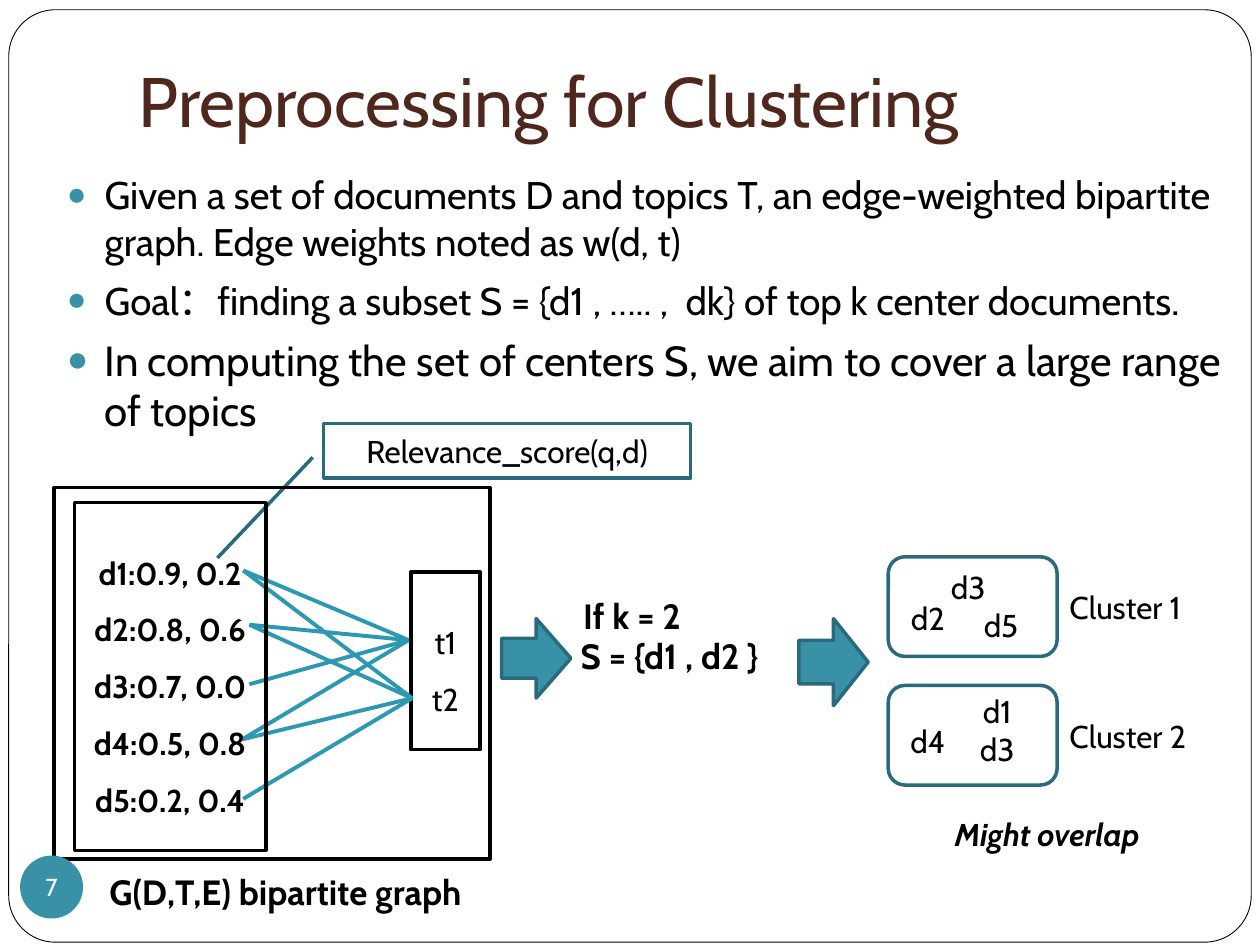
import pptx
import pptx.util
import pptx.dml.color
import pptx.enum.shapes
import pptx.enum.text
import pptx.oxml
import pptx.oxml.ns
from lxml import etree

Pt = pptx.util.Pt
SHAPE = pptx.enum.shapes.MSO_SHAPE
ALIGN = pptx.enum.text.PP_ALIGN
ANCHOR = pptx.enum.text.MSO_ANCHOR

FONT = "Cabin"
COLORS = {
    "ink": "000000",
    "paper": "FFFFFF",
    "title": "4F271C",
    "teal": "3891A7",
    "outline": "296B7C",
    "edge": "2D98B2",
}
BULLETS = [
    [("Given a set of documents D and topics T, an edge-weighted bipartite "
      "graph. Edge weights noted as w(d, t)", 22)],
    [("Goal：finding a subset S = {d1 , ….. ,  dk} of top k center documents", 22),
     (".", 24)],
    [("In computing the set of centers S, we aim to cover a large range of topics", 24)],
]
DOCUMENTS = ["d1:0.9, 0.2", "d2:0.8, 0.6", "d3:0.7, 0.0", "d4:0.5, 0.8", "d5:0.2, 0.4"]
DOCUMENT_PORTS = {"d1": (139, 326), "d2": (142.5, 357), "d3": (142.5, 391),
                  "d4": (138.5, 422.5), "d5": (139, 456.5)}
TOPIC_PORTS = {"t1": (233.5, 365.8), "t2": (235.5, 399)}
EDGES = [("d1", "t1"), ("d3", "t1"), ("d4", "t1"), ("d2", "t2"),
         ("d5", "t2"), ("d1", "t2"), ("d2", "t1"), ("d4", "t2")]
CLUSTERS = [("Cluster 1", 318.2, 332.6), ("Cluster 2", 391.7, 406.1)]
MEMBERS = [("d2", 501.8, 335.5), ("d4", 501.8, 406.1), ("d3", 524.9, 318.2),
           ("d1", 541.4, 388.8), ("d5", 543.6, 339.8), ("d3", 541.4, 410.4)]


def rgb(name):
    return pptx.dml.color.RGBColor.from_string(COLORS[name])


def style_font(font, size, color="ink", bold=False, italic=False):
    font.name = FONT
    font.size = Pt(size)
    font.color.rgb = rgb(color)
    font.bold = bold
    font.italic = italic


def place(part, box):
    part.left, part.top, part.width, part.height = map(Pt, box)


def write_lines(frame, lines, size, color="ink", bold=False, italic=False,
                align=ALIGN.LEFT, spacing=None):
    frame.word_wrap = True
    frame.text = "\n".join(lines)
    for paragraph in frame.paragraphs:
        paragraph.alignment = align
        paragraph.line_spacing = spacing
        style_font(paragraph.font, size, color, bold, italic)


def add_figure(slide, kind, box, fill=None, line=None, width=2, lines=(),
               size=18, color="ink", bold=False, spacing=None):
    figure = slide.shapes.add_shape(kind, *map(Pt, box))
    figure.shadow.inherit = False
    if fill:
        figure.fill.solid()
        figure.fill.fore_color.rgb = rgb(fill)
    else:
        figure.fill.background()
    if line:
        figure.line.color.rgb = rgb(line)
        figure.line.width = Pt(width)
    else:
        figure.line.fill.background()
    if lines:
        figure.text_frame.vertical_anchor = ANCHOR.MIDDLE
        write_lines(figure.text_frame, lines, size, color, bold,
                    align=ALIGN.CENTER, spacing=spacing)
    return figure


def add_label(slide, text, box, size, bold=False, italic=False):
    label = slide.shapes.add_textbox(*map(Pt, box))
    write_lines(label.text_frame, [text], size, bold=bold, italic=italic)


def add_edge(slide, start, end):
    edge = slide.shapes.add_connector(
        pptx.enum.shapes.MSO_CONNECTOR.STRAIGHT, *map(Pt, (*start, *end)))
    edge.line.color.rgb = rgb("edge")
    edge.line.width = Pt(2.25)
    etree.SubElement(edge.element.spPr, pptx.oxml.ns.qn("a:effectLst"))


def set_bullet(paragraph):
    properties = paragraph._p.get_or_add_pPr()
    properties.set("marL", str(Pt(21.6)))
    properties.set("indent", str(-Pt(21.6)))
    namespace = pptx.oxml.ns.nsdecls("a")
    for markup in (
        f'<a:buClr {namespace}><a:srgbClr val="{COLORS["teal"]}"/></a:buClr>',
        f'<a:buSzPct {namespace} val="85000"/>',
        f'<a:buChar {namespace} char="●"/>',
    ):
        properties.append(pptx.oxml.parse_xml(markup))


def fill_title(title):
    place(title, (72, 9.4, 612, 78.5))
    frame = title.text_frame
    frame.auto_size = pptx.enum.text.MSO_AUTO_SIZE.NONE
    frame.vertical_anchor = ANCHOR.BOTTOM
    frame.margin_bottom = Pt(7.2)
    write_lines(frame, ["Preprocessing for Clustering"], 40, "title")


def fill_body(body):
    place(body, (31, 94.3, 674.6, 168.5))
    frame = body.text_frame
    frame.auto_size = pptx.enum.text.MSO_AUTO_SIZE.NONE
    for index, pieces in enumerate(BULLETS):
        paragraph = frame.add_paragraph() if index else frame.paragraphs[0]
        paragraph.space_before = Pt(5.8)
        set_bullet(paragraph)
        for text, size in pieces:
            run = paragraph.add_run()
            run.text = text
            style_font(run.font, size)


def add_page_frame(slide):
    frame = add_figure(slide, SHAPE.ROUNDED_RECTANGLE, (5, 5.6, 710, 532.8),
                       "paper", "ink", 0.5)
    frame.adjustments[0] = 0.05
    slide.shapes.title.element.addprevious(frame.element)


def add_score_callout(slide):
    callout = add_figure(slide, SHAPE.LINE_CALLOUT_1, (185, 241.9, 209.5, 31.4),
                         line="outline", lines=["Relevance_score(q,d)"])
    for index, value in enumerate((0.62, -0.03, 2.45, -0.29)):
        callout.adjustments[index] = value


def add_clusters(slide):
    for name, box_top, label_top in CLUSTERS:
        add_figure(slide, SHAPE.ROUNDED_RECTANGLE, (507.6, box_top, 96.5, 56.9),
                   line="outline")
        add_label(slide, name, (604, label_top, 85, 29), 18)
    for name, left, top in MEMBERS:
        add_figure(slide, SHAPE.OVAL, (left, top, 56.9, 34.6), lines=[name])
    add_label(slide, "Might overlap", (538.6, 462.2, 130.3, 29), 18, True, True)


def add_selection(slide):
    for box in ((286.6, 353.5, 39.6, 45.4), (456.5, 353.5, 39.6, 49.7)):
        add_figure(slide, SHAPE.RIGHT_ARROW, box, "teal", "outline")
    add_label(slide, "If k = 2", (326.2, 336.2, 79.2, 31.5), 20, True)
    add_label(slide, "S = {d1 , d2 }", (324.7, 359.3, 158.4, 31.5), 20, True)


def add_bipartite_graph(slide):
    add_figure(slide, SHAPE.RECTANGLE, (234.7, 326.9, 39.6, 101.5), line="ink",
               lines=TOPIC_PORTS, spacing=1.5)
    for document, topic in EDGES:
        add_edge(slide, DOCUMENT_PORTS[document], TOPIC_PORTS[topic])
    add_figure(slide, SHAPE.RECTANGLE, (42.5, 287.3, 109.4, 198.7), line="ink",
               lines=DOCUMENTS, bold=True, spacing=1.5)
    add_figure(slide, SHAPE.RECTANGLE, (31, 278.6, 249.1, 212.4), line="ink")
    add_label(slide, "G(D,T,E) bipartite graph", (55.4, 493.9, 236.2, 31.5), 20, True)


def add_page_number(slide):
    badge = add_figure(slide, SHAPE.OVAL, (11.5, 488.9, 36, 36), "teal",
                       lines=["7"], size=14, color="paper")
    frame = badge.text_frame
    frame.word_wrap = False
    frame.margin_left = frame.margin_right = frame.margin_top = frame.margin_bottom = 0


def main():
    deck = pptx.Presentation()
    deck.slide_width, deck.slide_height = Pt(720), Pt(540)
    slide = deck.slides.add_slide(deck.slide_layouts[1])
    add_page_frame(slide)
    fill_title(slide.shapes.title)
    fill_body(slide.placeholders[1])
    add_score_callout(slide)
    add_clusters(slide)
    add_selection(slide)
    add_bipartite_graph(slide)
    add_page_number(slide)
    deck.save("out.pptx")


if __name__ == "__main__":
    main()
